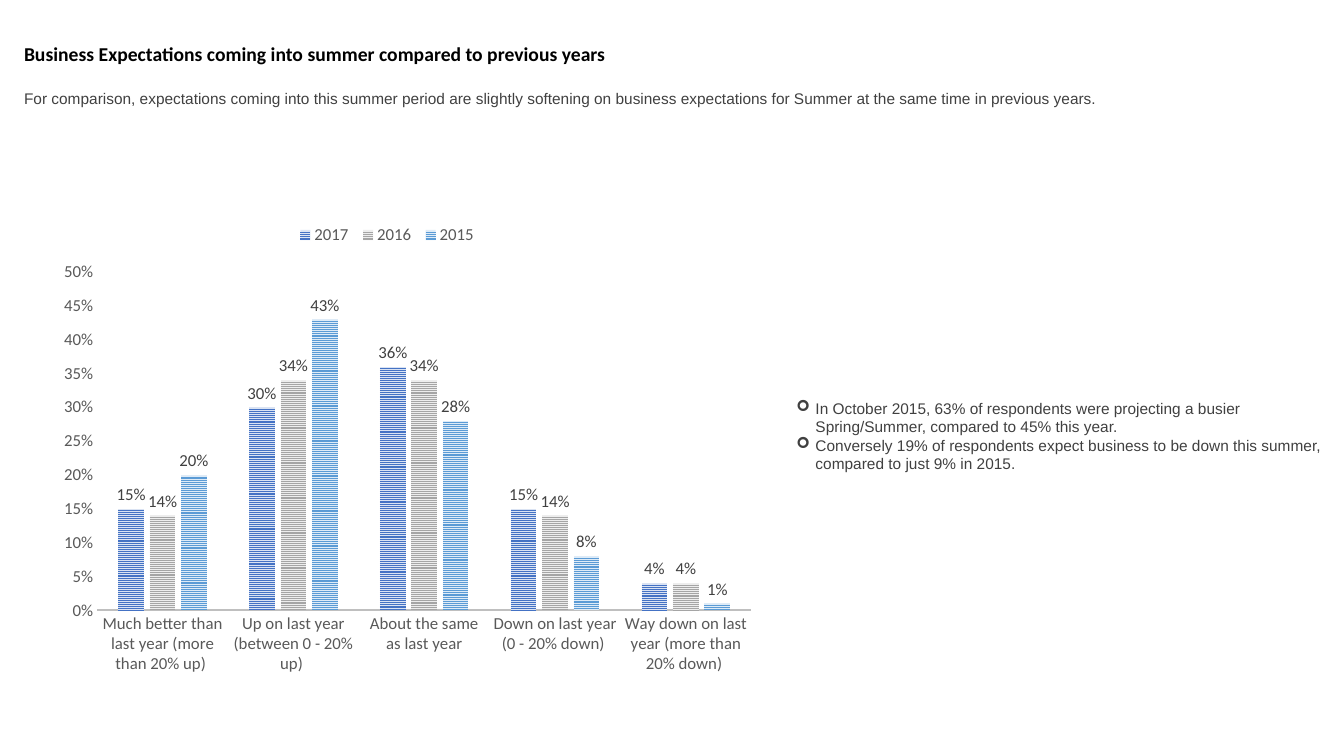
"""Build a slide comparing summer business expectations over three years."""
from lxml import etree
from pptx import Presentation
from pptx.chart.data import CategoryChartData
from pptx.dml.color import RGBColor
from pptx.enum.chart import XL_CHART_TYPE, XL_LABEL_POSITION, XL_LEGEND_POSITION, XL_TICK_MARK
from pptx.enum.dml import MSO_PATTERN
from pptx.oxml.ns import qn
from pptx.util import Inches, Pt

BLACK = RGBColor(0x00, 0x00, 0x00)
DARK_GREY = RGBColor(0x40, 0x40, 0x40)
MID_GREY = RGBColor(0x59, 0x59, 0x59)
AXIS_GREY = RGBColor(0xBF, 0xBF, 0xBF)
BLUE, PALE_BLUE = RGBColor(0x44, 0x72, 0xC4), RGBColor(0xDA, 0xE3, 0xF3)
GREY, PALE_GREY = RGBColor(0xA5, 0xA5, 0xA5), RGBColor(0xED, 0xED, 0xED)
SKY, PALE_SKY = RGBColor(0x5B, 0x9B, 0xD5), RGBColor(0xDE, 0xEB, 0xF7)

CATEGORIES = [
    "Much better than last year (more than 20% up) ",
    "Up on last year (between 0 - 20% up) ",
    "About the same as last year",
    "Down on last year (0 - 20% down) ",
    "Way down on last year (more than 20% down) ",
]
YEARS = [
    ("2017", (0.15, 0.30, 0.36, 0.15, 0.04), BLUE, PALE_BLUE),
    ("2016", (0.14, 0.34, 0.34, 0.14, 0.04), GREY, PALE_GREY),
    ("2015", (0.20, 0.43, 0.28, 0.08, 0.01), SKY, PALE_SKY),
]
HEADING = [
    ("Business Expectations coming into summer compared to previous years",
     "Calibri", 14, BLACK, True),
    ("For comparison, expectations coming into this summer period are slightly softening "
     "on business expectations for Summer at the same time in previous years.",
     "Arial", 11, DARK_GREY, False),
]
FINDINGS = [
    "In October 2015, 63% of respondents were projecting a busier Spring/Summer, "
    "compared to 45% this year.",
    "Conversely 19% of respondents expect business to be down this summer, "
    "compared to just 9% in 2015.",
]


def style_font(font, name, size, color, bold=False):
    """Set typeface, size, colour and weight."""
    font.name, font.size, font.bold = name, Pt(size), bold
    font.color.rgb = color


def place_manually(parent, index, settings):
    """Give a chart part a fixed place, in shares of the chart."""
    for old_layout in parent.findall(qn("c:layout")):
        parent.remove(old_layout)
    layout = etree.Element(qn("c:layout"))
    manual = etree.SubElement(layout, qn("c:manualLayout"))
    for tag, value in settings:
        etree.SubElement(manual, qn(f"c:{tag}")).set("val", str(value))
    parent.insert(index, layout)


deck = Presentation()
deck.slide_width, deck.slide_height = Inches(13.33), Inches(7.5)
page = deck.slides.add_slide(deck.slide_layouts[6])

heading_box = page.shapes.add_textbox(Inches(0.14), Inches(0.37), Inches(12.97), Inches(0.76))
heading_frame = heading_box.text_frame
heading_frame.word_wrap = True
heading_frame.text = "\n".join(line[0] for line in HEADING)
for para, (_, name, size, color, bold) in zip(heading_frame.paragraphs, HEADING):
    style_font(para.runs[0].font, name, size, color, bold)
heading_frame.paragraphs[0].space_after = Pt(17)

chart_data = CategoryChartData(number_format="0%")
chart_data.categories = CATEGORIES
for year, shares, _, _ in YEARS:
    chart_data.add_series(year, shares)
chart = page.shapes.add_chart(
    XL_CHART_TYPE.COLUMN_CLUSTERED, Inches(0.5), Inches(1.75), Inches(7.03), Inches(5.54),
    chart_data).chart
chart.has_title = False
style_font(chart.font, "Calibri", 10, BLACK)

plot = chart.plots[0]
plot.gap_width, plot.overlap = 164, -22
plot.vary_by_categories = False
for series, (_, _, stripe, ground) in zip(plot.series, YEARS):
    fill = series.format.fill
    fill.patterned()
    fill.pattern = MSO_PATTERN.NARROW_HORIZONTAL
    fill.fore_color.rgb, fill.back_color.rgb = stripe, ground
    labels = series.data_labels
    labels.show_value = True
    labels.number_format, labels.number_format_is_linked = "0%", False
    labels.position = XL_LABEL_POSITION.OUTSIDE_END
    style_font(labels.font, "Calibri", 12, DARK_GREY)

for axis in (chart.category_axis, chart.value_axis):
    axis.major_tick_mark = axis.minor_tick_mark = XL_TICK_MARK.NONE
    axis.has_major_gridlines = False
    style_font(axis.tick_labels.font, "Calibri", 12, MID_GREY)
chart.category_axis.format.line.color.rgb = AXIS_GREY
chart.category_axis.format.line.width = Pt(1.5)
value_axis = chart.value_axis
value_axis.format.line.fill.background()
value_axis.minimum_scale, value_axis.maximum_scale, value_axis.major_unit = 0, 0.5, 0.05
value_axis.tick_labels.number_format = "0%"
value_axis.tick_labels.number_format_is_linked = False

chart.has_legend = True
chart.legend.position = XL_LEGEND_POSITION.TOP
chart.legend.include_in_layout = False
style_font(chart.legend.font, "Calibri", 12, MID_GREY)

edges = [("xMode", "edge"), ("yMode", "edge")]
place_manually(chart.element.find(".//" + qn("c:plotArea")), 0,
               [("layoutTarget", "inner"), *edges,
                ("x", 0.066), ("y", 0.171), ("w", 0.923), ("h", 0.606)])
place_manually(chart.element.find(".//" + qn("c:legend")), 1,
               [*edges, ("x", 0.34), ("y", 0.08), ("w", 0.27), ("h", 0.05)])

findings_box = page.shapes.add_textbox(Inches(7.8), Inches(3.91), Inches(5.53), Inches(1.03))
findings_frame = findings_box.text_frame
findings_frame.word_wrap = True
findings_frame.text = "\n".join(FINDINGS)
indent = Inches(0.19)
for para in findings_frame.paragraphs:
    style_font(para.runs[0].font, "Arial", 11, DARK_GREY)
    properties = para.runs[0]._r.getparent().get_or_add_pPr()
    properties.set("marL", str(indent))
    properties.set("indent", str(-indent))
    etree.SubElement(properties, qn("a:buFont")).set("typeface", "Wingdings")
    etree.SubElement(properties, qn("a:buChar")).set("char", "➢")

deck.save("out.pptx")
